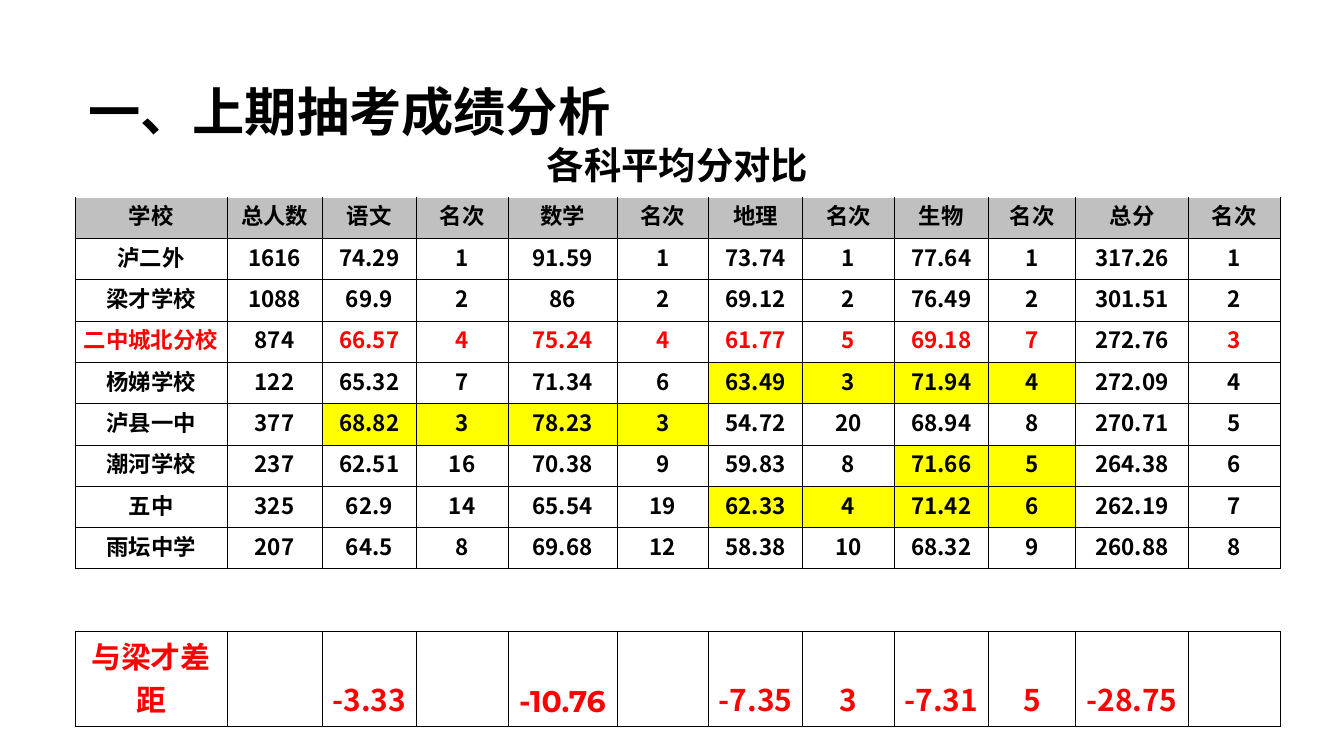
from dataclasses import dataclass

from lxml.etree import SubElement
from pptx import Presentation
from pptx.dml.color import RGBColor
from pptx.enum.text import MSO_ANCHOR as Anchor, PP_ALIGN as Align
from pptx.oxml import parse_xml
from pptx.oxml.ns import nsdecls, qn
from pptx.util import Cm, Pt


@dataclass(frozen=True)
class Theme:
    black: str = "000000"
    white: str = "FFFFFF"
    red: str = "FF0000"
    grey: str = "C0C0C0"
    yellow: str = "FFFF00"
    label_font: str = "Arial"
    cjk_font: str = "Noto Sans CJK SC"
    accent_font: str = "Montserrat"
    heading: int = 28
    caption: int = 20
    gap: int = 16
    body: int = 12
    rule: float = 0.5


THEME = Theme()

# Content
COLUMN_WIDTHS = [2.87, 1.8, 1.78, 1.73, 2.06, 1.73, 1.78, 1.73, 1.78, 1.65, 2.13, 1.73]
HEADER = "学校 总人数 语文 名次 数学 名次 地理 名次 生物 名次 总分 名次".split()
SCHOOLS = [line.split() for line in (
    "泸二外 1616 74.29 1 91.59 1 73.74 1 77.64 1 317.26 1",
    "梁才学校 1088 69.9 2 86 2 69.12 2 76.49 2 301.51 2",
    "二中城北分校 874 66.57 4 75.24 4 61.77 5 69.18 7 272.76 3",
    "杨娣学校 122 65.32 7 71.34 6 63.49 3 71.94 4 272.09 4",
    "泸县一中 377 68.82 3 78.23 3 54.72 20 68.94 8 270.71 5",
    "潮河学校 237 62.51 16 70.38 9 59.83 8 71.66 5 264.38 6",
    "五中 325 62.9 14 65.54 19 62.33 4 71.42 6 262.19 7",
    "雨坛中学 207 64.5 8 69.68 12 58.38 10 68.32 9 260.88 8",
)]
GAP = ["与梁才差距", "", "-3.33", "", "-10.76", "", "-7.35", "3", "-7.31", "5", "-28.75", ""]
OWN_SCHOOL = "二中城北分校"
OWN_BLACK_COLUMNS = (1, 10)
HIGHLIGHTS = {
    "杨娣学校": range(6, 10),
    "泸县一中": range(2, 6),
    "潮河学校": range(8, 10),
    "五中": range(6, 10),
}
HEADER_ROW = 1
FIRST_SCHOOL_ROW = 2
SPACER_ROW = FIRST_SCHOOL_ROW + len(SCHOOLS)
GAP_ROW = SPACER_ROW + 1
ROW_HEIGHTS = [1.18] + [0.78] * (1 + len(SCHOOLS)) + [1.18, 1.8]


def write_text(frame, text, size, font, color=THEME.black, align=Align.LEFT):
    paragraph = frame.paragraphs[0]
    paragraph.alignment = align
    run = paragraph.add_run()
    run.text = text
    run.font.size = Pt(size)
    run.font.bold = True
    run.font.name = font
    run.font.color.rgb = RGBColor.from_string(color)
    SubElement(run.font._element, qn("a:ea")).set("typeface", THEME.cjk_font)


class SlideBuilder:
    def __init__(self, theme, slide):
        self.theme = theme
        self.slide = slide

    def heading(self, text, left, top, width, height):
        box = self.slide.shapes.add_textbox(Cm(left), Cm(top), Cm(width), Cm(height))
        box.text_frame.word_wrap = True
        write_text(box.text_frame, text, self.theme.heading, self.theme.cjk_font)

    def table(self, left, top, widths, heights):
        frame = self.slide.shapes.add_table(
            len(heights), len(widths), Cm(left), Cm(top), Cm(sum(widths)), Cm(sum(heights)))
        table = frame.table
        table.first_row = table.horz_banding = False
        for column, width in zip(table.columns, widths):
            column.width = Cm(width)
        for row, height in zip(table.rows, heights):
            row.height = Cm(height)
        return table

    def cell(self, cell, text="", size=None, font=None, color=None,
             fill=None, anchor=Anchor.MIDDLE, borders=None):
        """Borders maps sides L, R, T, B to a colour, or None for no line."""
        if fill:
            cell.fill.solid()
            cell.fill.fore_color.rgb = RGBColor.from_string(fill)
        else:
            cell.fill.background()
        cell.margin_left = cell.margin_right = cell.margin_top = Cm(0.03)
        cell.margin_bottom = Cm(0.13)
        cell.vertical_anchor = anchor
        if text:
            write_text(cell.text_frame, text, size or self.theme.body,
                       font or self.theme.cjk_font, color or self.theme.black, Align.CENTER)
        colors = dict.fromkeys("LRTB", self.theme.black) | (borders or {})
        properties = cell._tc.get_or_add_tcPr()
        for index, (side, line) in enumerate(colors.items()):
            paint = (f'<a:solidFill><a:srgbClr val="{line}"/></a:solidFill>'
                     if line else "<a:noFill/>")
            properties.insert(index, parse_xml(
                f'<a:ln{side} {nsdecls("a")} w="{Pt(self.theme.rule)}">{paint}</a:ln{side}>'))


def main():
    deck = Presentation()
    deck.slide_width, deck.slide_height = Cm(25.4), Cm(14.28)
    builder = SlideBuilder(THEME, deck.slides.add_slide(deck.slide_layouts[6]))

    # Score table
    scores = builder.table(1.42, 2.54, COLUMN_WIDTHS, ROW_HEIGHTS)
    last_column = len(COLUMN_WIDTHS) - 1

    # Caption row
    scores.cell(0, 0).merge(scores.cell(0, last_column))
    for column in range(len(COLUMN_WIDTHS)):
        builder.cell(scores.cell(0, column), "" if column else "各科平均分对比",
                     size=THEME.caption, font=THEME.label_font, anchor=Anchor.BOTTOM,
                     borders=dict.fromkeys("LRTB", THEME.white))

    # Column headings
    for column, label in enumerate(HEADER):
        builder.cell(scores.cell(HEADER_ROW, column), label, font=THEME.label_font,
                     fill=THEME.grey, borders={"T": THEME.white})

    # School rows
    for row, school in enumerate(SCHOOLS, FIRST_SCHOOL_ROW):
        name = school[0]
        for column, value in enumerate(school):
            own = name == OWN_SCHOOL and column not in OWN_BLACK_COLUMNS
            marked = column in HIGHLIGHTS.get(name, ())
            builder.cell(scores.cell(row, column), value,
                         font=THEME.cjk_font if column else THEME.label_font,
                         color=THEME.red if own else THEME.black,
                         fill=THEME.yellow if marked else None,
                         anchor=Anchor.BOTTOM if column == last_column else Anchor.MIDDLE)

    # Open spacer row and gap row
    gap_fonts = {0: THEME.label_font, 4: THEME.accent_font}
    for column, value in enumerate(GAP):
        builder.cell(scores.cell(SPACER_ROW, column), borders={"L": None, "R": None})
        builder.cell(scores.cell(GAP_ROW, column), value, size=THEME.gap,
                     font=gap_fonts.get(column), color=THEME.red, anchor=Anchor.BOTTOM)

    # Heading
    builder.heading("一、上期抽考成绩分析", 1.42, 1.37, 16.33, 1.45)

    deck.save("out.pptx")


if __name__ == "__main__":
    main()
